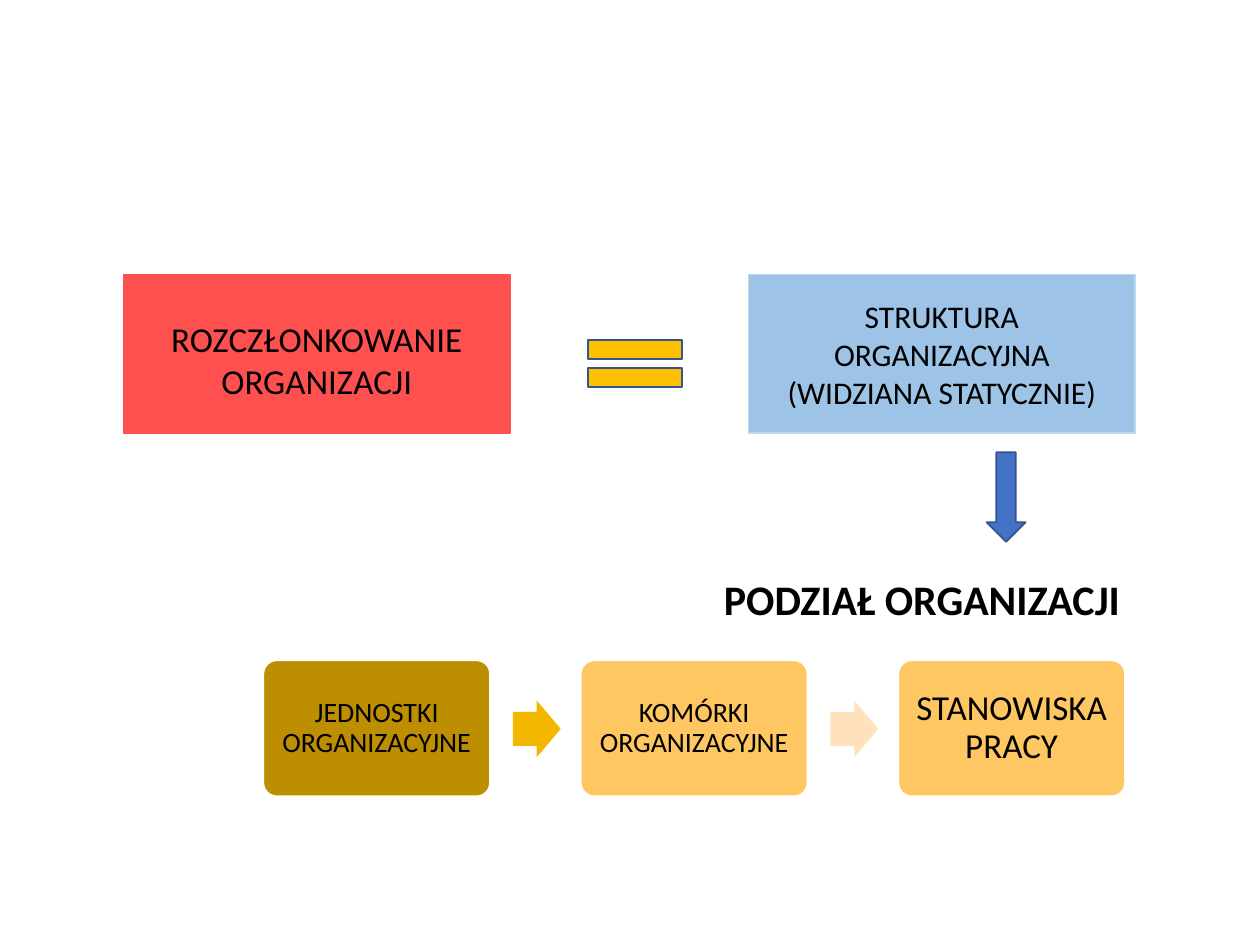
from lxml.etree import SubElement
from pptx import Presentation
from pptx.dml.color import RGBColor
from pptx.enum.shapes import MSO_SHAPE as Shape
from pptx.enum.text import MSO_ANCHOR as Anchor, PP_ALIGN as Align
from pptx.oxml.ns import qn
from pptx.util import Inches, Pt

FONT = "Calibri"
COLORS = {
    "text": "000000",
    "white": "FFFFFF",
    "division": "FF5050",
    "structure": "9DC3E6",
    "structure_edge": "BDD7EE",
    "equals": "FFC000",
    "edge": "325491",
    "down": "4472C4",
    "units": "BD8E00",
    "cells": "FFC762",
    "to_cells": "F4B700",
    "to_posts": "FFE2BC",
}
UNITS = [
    ("JEDNOSTKI ORGANIZACYJNE", 16, "units"),
    ("KOMÓRKI ORGANIZACYJNE", 16, "cells"),
    ("STANOWISKA PRACY", 20, "cells"),
]
STEP_ARROWS = ["to_cells", "to_posts"]
UNIT_LEFT, UNIT_PITCH = 2.09, 2.52


def rgb(name):
    return RGBColor.from_string(COLORS[name])


def add_figure(slide, kind, box, fill, edge=None):
    figure = slide.shapes.add_shape(kind, *map(Inches, box))
    figure.shadow.inherit = False
    figure.fill.solid()
    figure.fill.fore_color.rgb = rgb(fill)
    if edge:
        figure.line.color.rgb = rgb(edge)
        figure.line.width = Pt(1)
    else:
        figure.line.fill.background()
    return figure


def style_text(paragraph, size, align=Align.CENTER, bold=False):
    paragraph.alignment = align
    paragraph.font.name = FONT
    paragraph.font.size = Pt(size)
    paragraph.font.bold = bold
    paragraph.font.color.rgb = rgb("text")


def label(figure, text, size, inset, spacing=1.0):
    frame = figure.text_frame
    frame.text = text
    frame.word_wrap = True
    frame.vertical_anchor = Anchor.MIDDLE
    frame.margin_left = frame.margin_right = Inches(inset)
    frame.paragraphs[0].line_spacing = spacing
    style_text(frame.paragraphs[0], size)


def add_heading(slide):
    heading = slide.placeholders[1]
    heading.left, heading.top = Inches(0.41), Inches(4.55)
    heading.width, heading.height = Inches(8.62), Inches(0.6)
    frame = heading.text_frame
    frame.text = "PODZIAŁ ORGANIZACJI"
    frame.margin_right = Inches(0.14)
    paragraph = frame.paragraphs[0]
    paragraph.line_spacing = 0.9
    paragraph.space_before = Pt(0)
    properties = paragraph._p.get_or_add_pPr()
    properties.set("marL", "0")
    properties.set("indent", "0")
    SubElement(properties, qn("a:buNone"))
    style_text(paragraph, 24, Align.RIGHT, bold=True)


def add_equation(slide):
    division = add_figure(slide, Shape.RECTANGLE, (0.98, 2.18, 3.07, 1.26),
                          "division", "division")
    label(division, "ROZCZŁONKOWANIE ORGANIZACJI", 20, 0.18)
    division.text_frame.margin_top = Inches(0.13)
    structure = add_figure(slide, Shape.RECTANGLE, (5.94, 2.18, 3.07, 1.26),
                           "structure", "structure_edge")
    label(structure, "STRUKTURA ORGANIZACYJNA (WIDZIANA STATYCZNIE)", 18, 0.18)
    add_figure(slide, Shape.MATH_EQUAL, (4.53, 2.57, 1.02, 0.63), "equals", "edge")


def add_unit_chain(slide):
    for index, (text, size, fill) in enumerate(UNITS):
        left = UNIT_LEFT + index * UNIT_PITCH
        unit = add_figure(slide, Shape.ROUNDED_RECTANGLE,
                          (left, 5.24, 1.8, 1.08), fill, "white")
        unit.adjustments[0] = 0.1
        label(unit, text, size, 0.07, 0.9)
    for index, fill in enumerate(STEP_ARROWS):
        left = UNIT_LEFT + index * UNIT_PITCH + 1.98
        arrow = add_figure(slide, Shape.RIGHT_ARROW, (left, 5.56, 0.38, 0.45), fill)
        arrow.adjustments[0] = 0.6


def main():
    presentation = Presentation()
    presentation.slide_width, presentation.slide_height = Inches(10), Inches(7.5)
    slide = presentation.slides.add_slide(presentation.slide_layouts[1])
    title = slide.shapes.title
    title.element.getparent().remove(title.element)
    add_heading(slide)
    add_equation(slide)
    add_unit_chain(slide)
    add_figure(slide, Shape.DOWN_ARROW, (7.83, 3.59, 0.31, 0.71), "down", "edge")
    presentation.save("out.pptx")


if __name__ == "__main__":
    main()
